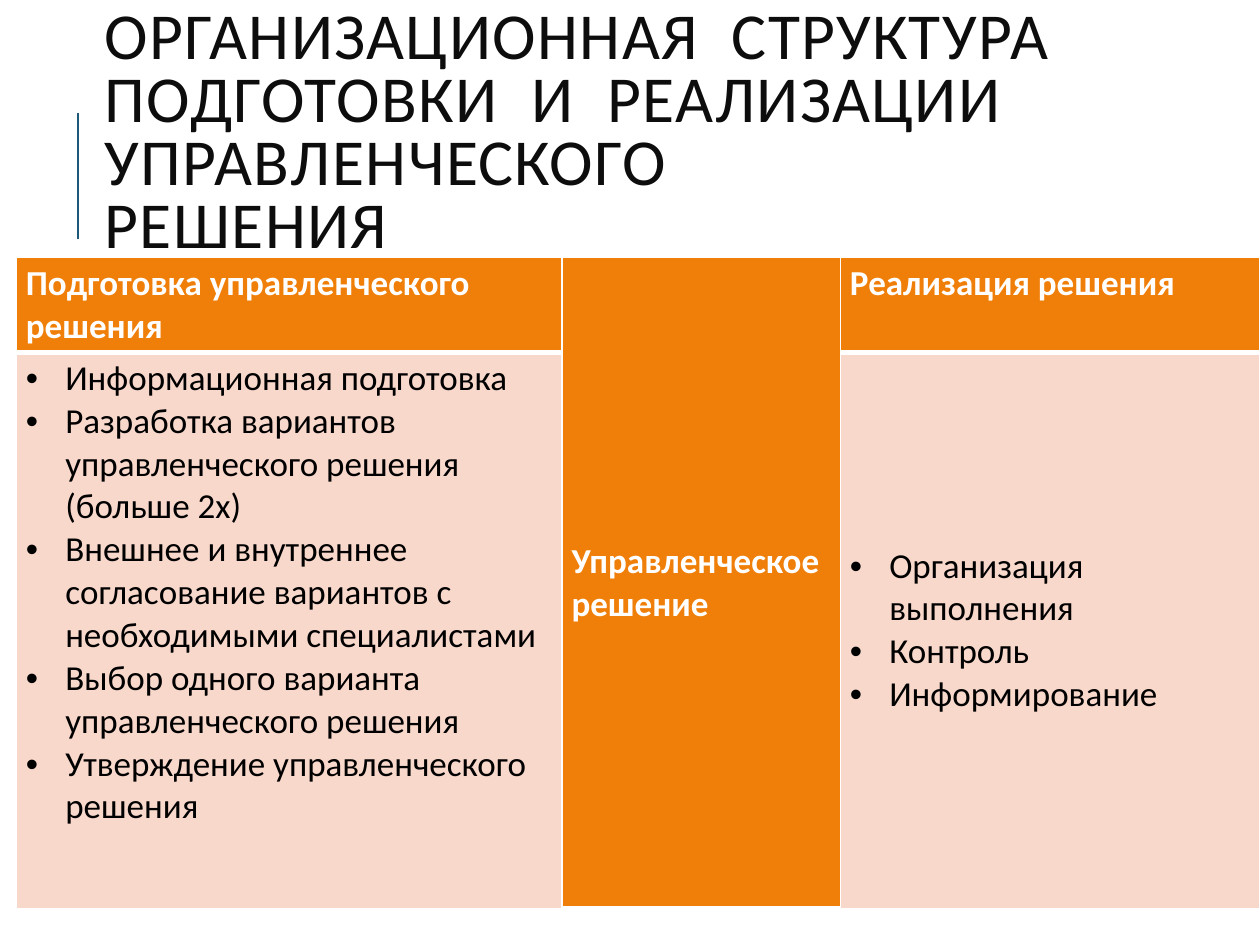
from pptx import Presentation
from pptx.dml.color import RGBColor
from pptx.enum.shapes import MSO_CONNECTOR
from pptx.enum.text import MSO_ANCHOR, MSO_AUTO_SIZE, PP_ALIGN
from pptx.oxml.ns import qn
from pptx.util import Pt
from lxml.etree import SubElement

FONT = "Calibri"
WHITE = RGBColor(0xFF, 0xFF, 0xFF)
BLACK = RGBColor(0, 0, 0)
TITLE_INK = RGBColor(0x0D, 0x0D, 0x0D)
BLUE = RGBColor(0x1B, 0x58, 0x7C)
ORANGE = RGBColor(0xF0, 0x7F, 0x09)
PEACH = RGBColor(0xF9, 0xD8, 0xCC)

TITLE = ("ОРГАНИЗАЦИОННАЯ  СТРУКТУРА  ПОДГОТОВКИ  И  РЕАЛИЗАЦИИ  "
         "УПРАВЛЕНЧЕСКОГО\vРЕШЕНИЯ")
PREPARATION = [
    "Информационная подготовка",
    "Разработка вариантов управленческого решения (больше 2х)",
    "Внешнее и внутреннее согласование вариантов с необходимыми специалистами",
    "Выбор одного варианта управленческого решения",
    "Утверждение управленческого решения",
]
REALIZATION = ["Организация выполнения", "Контроль", "Информирование"]
COLUMN_WIDTHS = [311.8, 159.1, 239.8]
ROW_HEIGHTS = [52.9, 317.8]
BULLET_INDENT = Pt(22.5)


def add_title(slide, left, top, width, height):
    title = slide.shapes.title
    title.left, title.top, title.width, title.height = map(
        Pt, (left, top, width, height))
    tf = title.text_frame
    tf.text = TITLE
    tf.word_wrap = True
    tf.auto_size = MSO_AUTO_SIZE.NONE
    tf.vertical_anchor = MSO_ANCHOR.MIDDLE
    p = tf.paragraphs[0]
    p.alignment = PP_ALIGN.LEFT
    p.line_spacing = 0.8
    p.font.name, p.font.size = FONT, Pt(37.5)
    p.font.color.rgb = TITLE_INK
    for r in p.runs:
        r.font._element.set("spc", "80")


def add_accent_line(slide, x, top, height):
    line = slide.shapes.add_connector(
        MSO_CONNECTOR.STRAIGHT, Pt(x), Pt(top + height), Pt(x), Pt(top))
    line.line.color.rgb = BLUE
    line.line.width = Pt(1.5)
    SubElement(line._element.spPr, qn("a:effectLst"))


def set_borders(cell, **widths):
    """Draw white borders, 1 pt wide unless a side (L, R, T, B) is given."""
    tc_pr = cell._tc.get_or_add_tcPr()
    for side in "LRTB":
        ln = SubElement(tc_pr, qn(f"a:ln{side}"), w=str(Pt(widths.get(side, 1))))
        fill = SubElement(ln, qn("a:solidFill"))
        SubElement(fill, qn("a:srgbClr"), val=str(WHITE))


def add_bullet(p):
    p_pr = p._p.get_or_add_pPr()
    p_pr.set("marL", str(BULLET_INDENT))
    p_pr.set("indent", str(-BULLET_INDENT))
    SubElement(p_pr, qn("a:buFont"), typeface="Arial")
    SubElement(p_pr, qn("a:buChar"), char="•")


def fill_cell(cell, lines, header, anchor):
    cell.fill.solid()
    cell.fill.fore_color.rgb = ORANGE if header else PEACH
    cell.vertical_anchor = anchor
    cell.margin_left = cell.margin_right = Pt(5.4)
    cell.margin_top = cell.margin_bottom = Pt(2.7)
    cell.text = "\n".join(lines)
    for p in cell.text_frame.paragraphs:
        if not header:
            add_bullet(p)
        p.font.name, p.font.size, p.font.bold = FONT, Pt(20), header
        p.font.color.rgb = WHITE if header else BLACK


def add_structure_table(slide, left, top):
    table = slide.shapes.add_table(
        len(ROW_HEIGHTS), len(COLUMN_WIDTHS), Pt(left), Pt(top),
        Pt(sum(COLUMN_WIDTHS)), Pt(sum(ROW_HEIGHTS))).table
    table.horz_banding = False
    for column, width in zip(table.columns, COLUMN_WIDTHS):
        column.width = Pt(width)
    for row, height in zip(table.rows, ROW_HEIGHTS):
        row.height = Pt(height)
    for cell in table.rows[0].cells:
        set_borders(cell, B=3)
    for cell in table.rows[1].cells:
        set_borders(cell)
    table.cell(0, 1).merge(table.cell(1, 1))

    top_anchor, middle = MSO_ANCHOR.TOP, MSO_ANCHOR.MIDDLE
    for row, col, lines, anchor in [
        (0, 0, ["Подготовка управленческого решения"], top_anchor),
        (0, 1, ["Управленческое решение"], middle),
        (0, 2, ["Реализация решения"], top_anchor),
        (1, 0, PREPARATION, top_anchor),
        (1, 2, REALIZATION, middle),
    ]:
        fill_cell(table.cell(row, col), lines, row == 0, anchor)


def main():
    prs = Presentation()
    prs.slide_width, prs.slide_height = Pt(720), Pt(540)
    slide = prs.slides.add_slide(prs.slide_layouts[5])
    add_accent_line(slide, 44.6, 64.8, 72)
    add_title(slide, 52.6, 7.2, 656, 139.7)
    add_structure_table(slide, 9.4, 146.9)
    prs.save("out.pptx")


if __name__ == "__main__":
    main()
